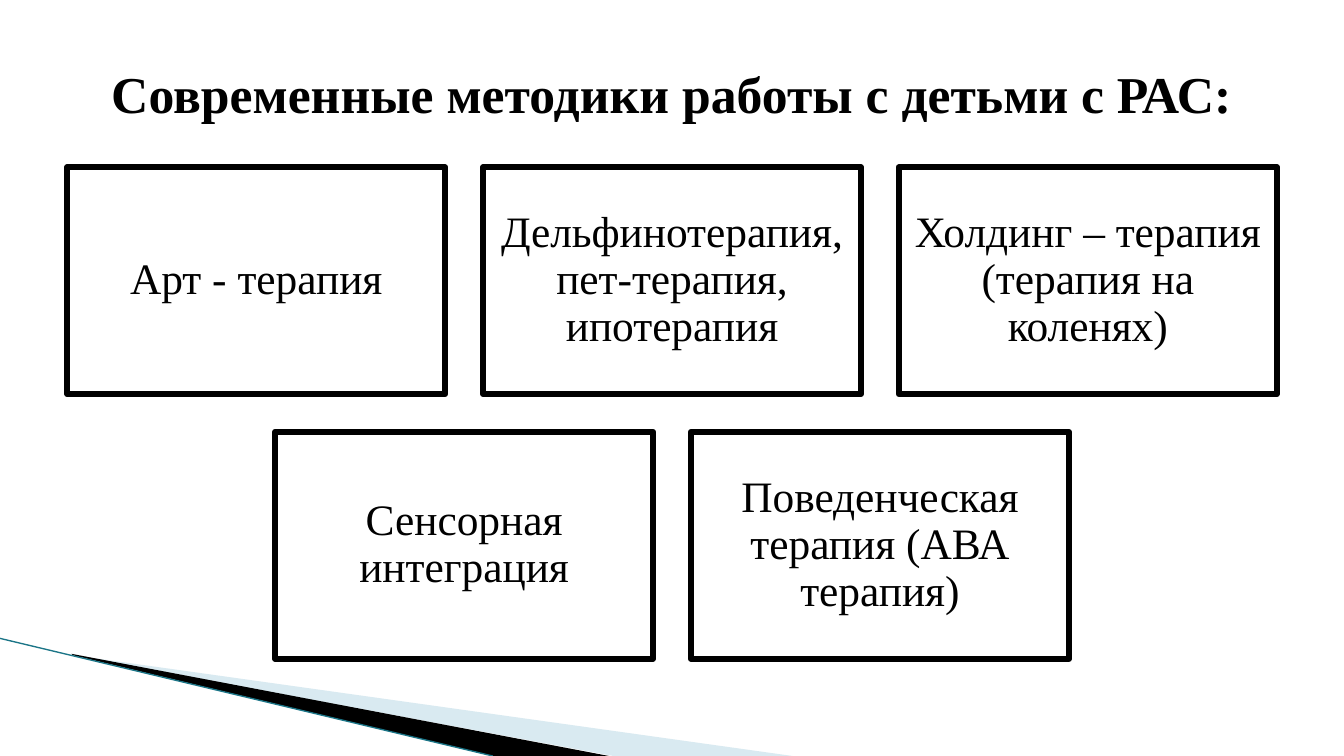
"""Build a slide listing modern methods of working with autistic children."""
import pptx
import pptx.dml.color
import pptx.enum.shapes
import pptx.enum.text
import pptx.oxml
import pptx.oxml.ns
import pptx.util
from lxml import etree

Pt = pptx.util.Pt

SLIDE_WIDTH, SLIDE_HEIGHT = 960, 540
FONT = "Times New Roman"
BLACK, WHITE = "000000", "FFFFFF"
TITLE = "Современные методики работы с детьми с РАС:"
METHOD_ROWS = [
    ["Арт - терапия",
     "Дельфинотерапия, пет-терапия, ипотерапия",
     "Холдинг – терапия (терапия на коленях)"],
    ["Сенсорная интеграция",
     "Поведенческая терапия (АВА терапия)"],
]
CARD_WIDTH, CARD_HEIGHT, CARD_GAP, CARDS_TOP = 270, 162, 27, 119.5
WEDGES = [
    ([(52.5, 468), (566, 540), (438, 540)], "A0CBDC", 40),
    ([(51, 467.3), (435, 540), (352, 540), (52, 468)], BLACK, 100),
]
EDGE_START, EDGE_END, EDGE_COLOR = (0, 456), (352, 540), "1B7587"


def color(hex_code):
    return pptx.dml.color.RGBColor.from_string(hex_code)


def add_child(parent, tag, **attributes):
    return etree.SubElement(parent, pptx.oxml.ns.qn(tag), attributes)


def fill_shape(shape, hex_code, opacity=100):
    shape.shadow.inherit = False
    shape.fill.solid()
    shape.fill.fore_color.rgb = color(hex_code)
    if opacity < 100:
        fill_color = shape.fill._xPr.find(".//" + pptx.oxml.ns.qn("a:srgbClr"))
        add_child(fill_color, "a:alpha", val=str(opacity * 1000))


def write_text(shape, text, size, margin, bold=False, spacing=1.0):
    frame = shape.text_frame
    frame.word_wrap = True
    frame.vertical_anchor = pptx.enum.text.MSO_ANCHOR.MIDDLE
    frame.margin_left = frame.margin_right = Pt(margin)
    frame.margin_top = frame.margin_bottom = Pt(margin)
    paragraph = frame.paragraphs[0]
    paragraph.alignment = pptx.enum.text.PP_ALIGN.CENTER
    paragraph.line_spacing = spacing
    run = paragraph.add_run()
    run.text = text
    run.font.name = FONT
    run.font.size = Pt(size)
    run.font.bold = bold
    run.font.color.rgb = color(BLACK)


def add_wedge(slide, points, hex_code, opacity):
    builder = slide.shapes.build_freeform(*points[0], scale=Pt(1))
    builder.add_line_segments(points[1:], close=True)
    wedge = builder.convert_to_shape()
    fill_shape(wedge, hex_code, opacity)
    wedge.line.fill.background()


def add_edge(slide):
    edge = slide.shapes.add_connector(
        pptx.enum.shapes.MSO_CONNECTOR.STRAIGHT,
        *(Pt(value) for value in EDGE_START + EDGE_END))
    edge.line.color.rgb = color(EDGE_COLOR)
    edge.line.width = Pt(0.95)
    add_child(edge._element.spPr, "a:effectLst")


def add_card(slide, text, left, top):
    card = slide.shapes.add_shape(
        pptx.enum.shapes.MSO_SHAPE.RECTANGLE,
        Pt(left), Pt(top), Pt(CARD_WIDTH), Pt(CARD_HEIGHT))
    fill_shape(card, WHITE)
    card.line.color.rgb = color(BLACK)
    card.line.width = Pt(4.33)
    add_child(card.line._get_or_add_ln(), "a:round")
    write_text(card, text, 31, 9.3, spacing=0.9)


def main():
    presentation = pptx.Presentation()
    presentation.slide_width = Pt(SLIDE_WIDTH)
    presentation.slide_height = Pt(SLIDE_HEIGHT)
    slide = presentation.slides.add_slide(presentation.slide_layouts[6])

    for points, hex_code, opacity in WEDGES:
        add_wedge(slide, points, hex_code, opacity)
    add_edge(slide)

    for row_index, methods in enumerate(METHOD_ROWS):
        row_width = len(methods) * (CARD_WIDTH + CARD_GAP) - CARD_GAP
        row_left = (SLIDE_WIDTH - row_width) / 2
        top = CARDS_TOP + row_index * (CARD_HEIGHT + CARD_GAP)
        for column, method in enumerate(methods):
            add_card(slide, method, row_left + column * (CARD_WIDTH + CARD_GAP), top)

    title = slide.shapes.add_textbox(Pt(48), Pt(21.6), Pt(864), Pt(90))
    write_text(title, TITLE, 36.9, 3.6, bold=True)
    presentation.save("out.pptx")


if __name__ == "__main__":
    main()
